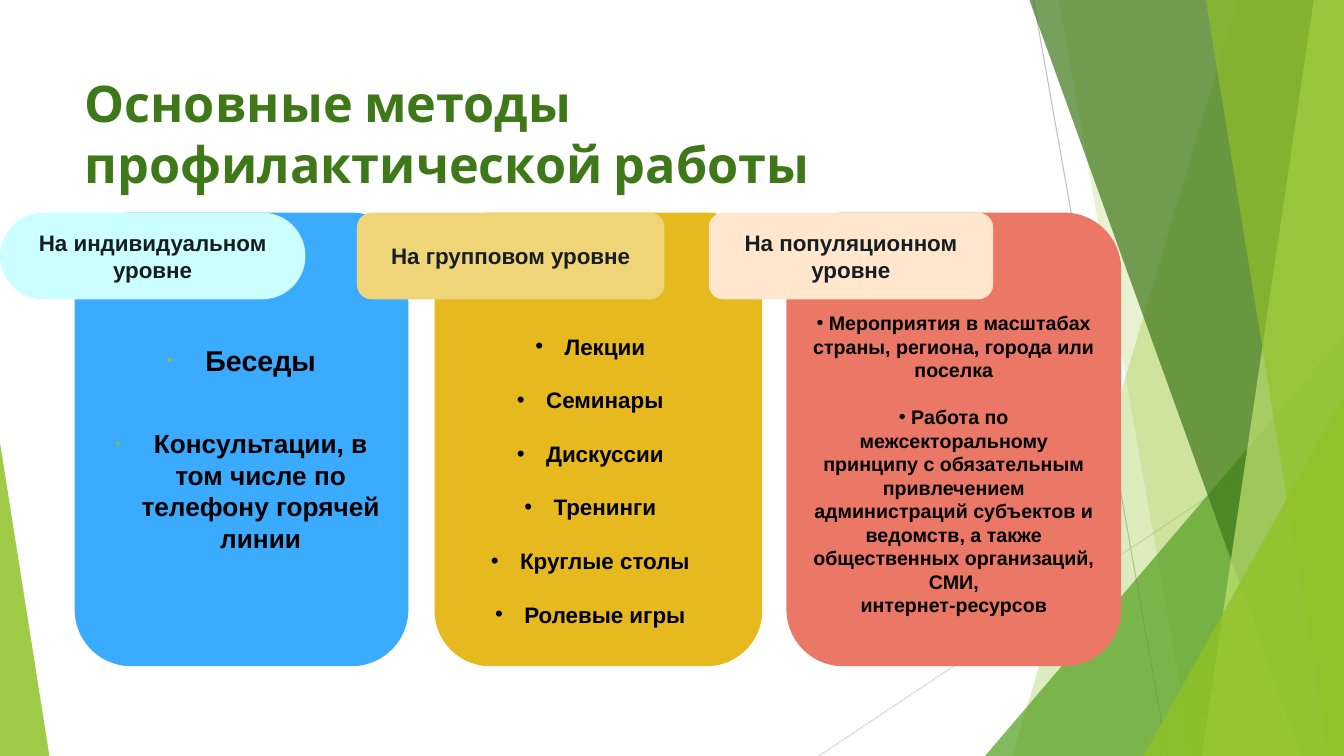
"""Build a slide on the main methods of preventive work."""
from dataclasses import dataclass

from lxml import etree
from pptx import Presentation
from pptx import util as u
from pptx.dml import color
from pptx.enum import shapes, text
from pptx.oxml import ns


@dataclass(frozen=True)
class Theme:
    head: str = "Cabin"
    body: str = "Arial"
    dark: str = "3F7819"
    lime: str = "90C226"
    leaf: str = "54A021"
    pale: str = "C0E474"
    ink: str = "000000"
    label: str = "161E22"
    title: float = 36
    large: float = 20.4
    mid: float = 18.7
    base: float = 16
    small: float = 14


@dataclass(frozen=True)
class Strip:
    top: float
    foot: float
    fill: str
    alpha: int


@dataclass(frozen=True)
class Wedge:
    left: float
    top: float
    wide: float
    peak: float
    fill: str
    alpha: int


@dataclass(frozen=True)
class Item:
    words: str
    size: float
    gap: float = 0
    dot: bool = True


@dataclass(frozen=True)
class Panel:
    left: float
    wide: float
    fill: str
    pad: float
    side: float
    hang: float
    items: tuple[Item, ...]
    dot: str = "000000"
    scale: int = 100


@dataclass(frozen=True)
class Tab:
    left: float
    wide: float
    fill: str
    words: str
    bend: float = 0.17


T = Theme()
W, H = 13.33, 7.5
TOP = 2.11
TALKS = ("Лекции", "Семинары", "Дискуссии", "Тренинги", "Круглые столы", "Ролевые игры")

RAYS = ((10.25, 0, 11.58, H, "BFBFBF"), (W, 4.03, 8.12, H, "D9D9D9"))
DECOR = (
    Strip(12.28, 10.04, T.lime, 30),
    Strip(10.5, 11.83, T.lime, 20),
    Wedge(9.77, 3.33, 3.56, 1, T.leaf, 72),
    Strip(10.21, 12.91, T.dark, 70),
    Strip(13.03, 11.92, T.pale, 70),
    Strip(11.96, 13.18, T.lime, 65),
    Wedge(11.34, 3.93, 1.99, 1, T.lime, 80),
    Wedge(0, 4.39, 0.49, 0, T.lime, 85),
)
PANELS = (
    Panel(0.74, 3.31, "3BABFF", 1.13, 0.1, 0.38, (
        Item("Беседы", T.large),
        Item("Консультации, в том числе по телефону горячей линии", T.mid, 36),
    ), T.lime, 53),
    Panel(4.31, 3.25, "E6B91E", 1.03, 0.26, 0.29, tuple(
        Item(talk, T.base, 19.1 if i else 0) for i, talk in enumerate(TALKS))),
    Panel(7.8, 3.32, "EB7766", 0.81, 0.08, 0, (
        Item(" Мероприятия в масштабах страны, региона, города или поселка", T.small),
        Item(" Работа по межсекторальному принципу с обязательным привлечением "
             "администраций субъектов и ведомств, а также общественных организаций, СМИ,",
             T.small, 16.8),
        Item("интернет-ресурсов", T.small, dot=False),
    )),
)
TABS = (
    Tab(0, 3.03, "CCFFFF", "На индивидуальном уровне", 0.5),
    Tab(3.54, 3.05, "F0D578", "На групповом уровне"),
    Tab(7.03, 2.82, "FFE6CD", "На популяционном уровне"),
)


def paint(shape, fill: str, alpha: int = 100) -> None:
    """Give a shape a plain fill without line or shadow."""
    shape.shadow.inherit = False
    shape.line.fill.background()
    shape.fill.solid()
    shape.fill.fore_color.rgb = color.RGBColor.from_string(fill)
    if alpha < 100:
        tint = shape.fill._xPr.find(".//" + ns.qn("a:srgbClr"))
        etree.SubElement(tint, ns.qn("a:alpha"), val=str(alpha * 1000))


def write(para, words: str, *, size: float, ink: str, font: str = T.body,
          align=text.PP_ALIGN.CENTER, gap: float = 0) -> None:
    """Write bold text into a paragraph."""
    para.alignment = align
    para.space_before = u.Pt(gap)
    run = para.add_run()
    run.text = words
    run.font.size = u.Pt(size)
    run.font.bold = True
    run.font.name = font
    run.font.color.rgb = color.RGBColor.from_string(ink)


def bullet(para, ink: str, scale: int, hang: float) -> None:
    """Put a round bullet before a paragraph."""
    props = para._p.get_or_add_pPr()
    props.set("marL", str(u.Inches(hang)))
    props.set("indent", str(-u.Inches(hang)))
    tint = etree.SubElement(props, ns.qn("a:buClr"))
    etree.SubElement(tint, ns.qn("a:srgbClr"), val=ink)
    etree.SubElement(props, ns.qn("a:buSzPct"), val=str(scale * 1000))
    etree.SubElement(props, ns.qn("a:buFont"), typeface=T.body)
    etree.SubElement(props, ns.qn("a:buChar"), char="•")


def ray(slide, x: float, y: float, x2: float, y2: float, ink: str) -> None:
    """Draw a thin line."""
    line = slide.shapes.add_connector(
        shapes.MSO_CONNECTOR.STRAIGHT, *map(u.Inches, (x, y, x2, y2)))
    line.line.width = u.Pt(0.75)
    line.line.color.rgb = color.RGBColor.from_string(ink)
    etree.SubElement(line._element.spPr, ns.qn("a:effectLst"))


def strip(slide, s: Strip) -> None:
    """Draw a full-height band that ends at the right edge."""
    form = slide.shapes.build_freeform(u.Inches(s.top), 0)
    ends = ((W, 0), (W, H), (s.foot, H))
    form.add_line_segments([(u.Inches(x), u.Inches(y)) for x, y in ends])
    paint(form.convert_to_shape(), s.fill, s.alpha)


def block(slide, kind, x: float, y: float, wide: float, high: float,
          bend: float, fill: str, alpha: int = 100):
    """Draw a filled preset shape and return it."""
    shape = slide.shapes.add_shape(kind, *map(u.Inches, (x, y, wide, high)))
    shape.adjustments[0] = bend
    paint(shape, fill, alpha)
    return shape


def wedge(slide, w: Wedge) -> None:
    """Draw a right triangle standing on the bottom edge."""
    block(slide, shapes.MSO_SHAPE.ISOSCELES_TRIANGLE, w.left, w.top, w.wide,
          H - w.top, w.peak, w.fill, w.alpha)


def panel(slide, p: Panel) -> None:
    """Draw a column with its list."""
    frame = block(slide, shapes.MSO_SHAPE.ROUNDED_RECTANGLE, p.left, TOP, p.wide,
                  4.5, 0.17, p.fill).text_frame
    frame.word_wrap = True
    frame.vertical_anchor = text.MSO_ANCHOR.TOP
    frame.margin_top = u.Inches(p.pad)
    frame.margin_left = u.Inches(min(p.side, 0.1))
    frame.margin_right = u.Inches(p.side)
    for i, item in enumerate(p.items):
        para = frame.add_paragraph() if i else frame.paragraphs[0]
        write(para, item.words, size=item.size, ink=T.ink, gap=item.gap)
        if item.dot:
            bullet(para, p.dot, p.scale, p.hang)


def tab(slide, t: Tab) -> None:
    """Draw a column heading."""
    frame = block(slide, shapes.MSO_SHAPE.ROUNDED_RECTANGLE, t.left, TOP, t.wide,
                  0.86, t.bend, t.fill).text_frame
    frame.word_wrap = True
    frame.vertical_anchor = text.MSO_ANCHOR.MIDDLE
    write(frame.paragraphs[0], t.words, size=T.base, ink=T.label)


def main() -> None:
    """Build and save the slide."""
    deck = Presentation()
    deck.slide_width, deck.slide_height = u.Inches(W), u.Inches(H)
    slide = deck.slides.add_slide(deck.slide_layouts[6])
    for line in RAYS:
        ray(slide, *line)
    for part in DECOR:
        (strip if isinstance(part, Strip) else wedge)(slide, part)
    frame = slide.shapes.add_textbox(*map(u.Inches, (0.74, 0.67, 9.4, 1.44))).text_frame
    frame.word_wrap = True
    write(frame.paragraphs[0], "Основные методы профилактической работы", size=T.title,
          ink=T.dark, font=T.head, align=text.PP_ALIGN.LEFT)
    for part in PANELS:
        panel(slide, part)
    for part in TABS:
        tab(slide, part)
    deck.save("out.pptx")


if __name__ == "__main__":
    main()
